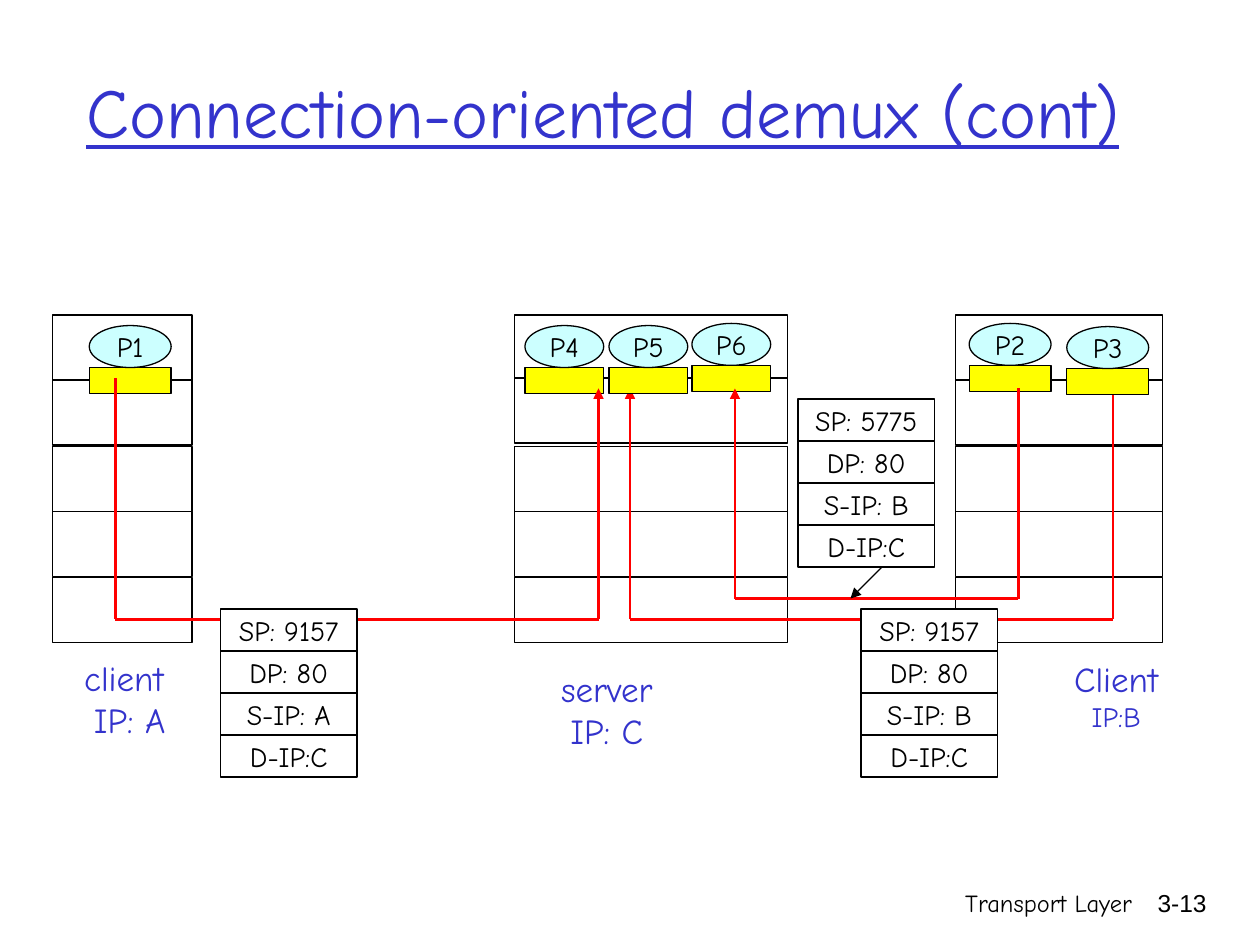
from dataclasses import dataclass

from lxml import etree
from pptx import Presentation
from pptx import util as u
from pptx.dml.color import RGBColor
from pptx.enum import shapes, text
from pptx.oxml.ns import qn

PX = 7620  # EMU per px: 120 px to the inch


@dataclass(frozen=True)
class Theme:
    font: str = "Comic Neue"
    number_font: str = "Arial"
    ink: str = "000000"
    paper: str = "FFFFFF"
    heading: str = "3333CC"
    process: str = "CCFFFF"
    socket: str = "FFFF00"
    connection: str = "FF0000"
    title_size: int = 40
    caption_size: int = 20
    label_size: int = 16
    footer_size: int = 14
    outline: float = 0.75
    connection_width: float = 1.5


THEME = Theme()
CENTER, LEFT, RIGHT = text.PP_ALIGN.CENTER, text.PP_ALIGN.LEFT, text.PP_ALIGN.RIGHT


def px(*lengths):
    return [u.Emu(length * PX) for length in lengths]


def write(frame, lines, sizes, color, align=CENTER, font=THEME.font, wrap=False):
    """Fill a text frame with one paragraph per line."""
    frame.text = "\n".join(lines)
    frame.word_wrap = wrap
    for paragraph, size in zip(frame.paragraphs, sizes):
        paragraph.alignment = align
        for run in paragraph.runs:
            run.font.name = font
            run.font.size = u.Pt(size)
            run.font.color.rgb = RGBColor.from_string(color)


def add_block(slide, preset, box, fill, label=None):
    block = slide.shapes.add_shape(preset, *px(*box))
    block.shadow.inherit = False
    block.fill.solid()
    block.fill.fore_color.rgb = RGBColor.from_string(fill)
    block.line.color.rgb = RGBColor.from_string(THEME.ink)
    block.line.width = u.Pt(THEME.outline)
    if label:
        write(block.text_frame, [label], [THEME.label_size], THEME.ink)
        block.text_frame.vertical_anchor = text.MSO_ANCHOR.MIDDLE


def add_line(slide, start, end, color, width, arrow=False):
    line = slide.shapes.add_connector(
        shapes.MSO_CONNECTOR.STRAIGHT, *px(*start, *end))
    line.line.color.rgb = RGBColor.from_string(color)
    line.line.width = u.Pt(width)
    properties = line._element.spPr
    if arrow:
        etree.SubElement(properties.find(qn("a:ln")), qn("a:tailEnd"), type="triangle")
    etree.SubElement(properties, qn("a:effectLst"))


def add_text(slide, box, lines, sizes, color, **style):
    write(slide.shapes.add_textbox(*px(*box)).text_frame, lines, sizes, color, **style)


def add_title(slide, box, wording):
    title = slide.shapes.title
    title.left, title.top, title.width, title.height = px(*box)
    write(title.text_frame, [wording], [THEME.title_size], THEME.heading, LEFT, wrap=True)
    title.text_frame.auto_size = text.MSO_AUTO_SIZE.NONE
    title.text_frame.vertical_anchor = text.MSO_ANCHOR.MIDDLE
    title.text_frame.paragraphs[0].runs[0].font.underline = True


def add_host(slide, box, second_layer_lift=0):
    """Protocol stack of five equal layers."""
    left, top, width, height = box
    for layer in range(5):
        lift = second_layer_lift if layer == 1 else 0
        layer_top = top + layer * height // 5 - lift
        add_block(slide, shapes.MSO_SHAPE.RECTANGLE,
                  (left, layer_top, width, height // 5), THEME.paper)


def add_process(slide, box, name):
    """Process ellipse standing on its socket."""
    left, top, width, height = box
    socket_height = 25
    process_height = height - socket_height
    add_block(slide, shapes.MSO_SHAPE.RECTANGLE,
              (left, top + process_height, width, socket_height), THEME.socket)
    add_block(slide, shapes.MSO_SHAPE.OVAL,
              (left, top, width, process_height), THEME.process, name)


def add_connection(slide, client_socket, server_socket, depth):
    """Path down from the client socket, across, and up to the server socket."""
    client_corner = (client_socket[0], depth)
    server_corner = (server_socket[0], depth)
    path = [client_socket, client_corner, server_corner, server_socket]
    for start, end in zip(path, path[1:]):
        add_line(slide, start, end, THEME.connection, THEME.connection_width,
                 arrow=end == server_socket)


def add_segment_header(slide, box, fields):
    left, top, width, height = box
    row = height // len(fields)
    for index, field in enumerate(fields):
        add_block(slide, shapes.MSO_SHAPE.RECTANGLE,
                  (left, top + index * row, width, row), THEME.paper, field)


def add_footer(slide, box, chapter, number):
    left, top, width, height = box
    number_width = 89
    add_text(slide, (left, top, 380, height), [chapter], [THEME.footer_size],
             THEME.ink, align=RIGHT, wrap=True)
    add_text(slide, (left + width - number_width, top, number_width, height), [number],
             [THEME.footer_size], THEME.ink, align=RIGHT, font=THEME.number_font, wrap=True)


def build_demux_slide(prs):
    slide = prs.slides.add_slide(prs.slide_layouts[5])
    add_title(slide, (70, 30, 1020, 150), "Connection-oriented demux (cont)")
    add_footer(slide, (710, 840, 451, 60), "Transport Layer", "3-13")

    # Hosts
    add_host(slide, (50, 300, 133, 313))
    add_host(slide, (910, 300, 197, 313))
    add_host(slide, (490, 300, 260, 313), second_layer_lift=2)

    # Host captions
    large, small = THEME.caption_size, THEME.label_size
    for box, lines, sizes in (
        ((61, 619, 114, 92), ["client", " IP: A"], [large, large]),
        ((515, 630, 126, 92), ["server", "IP: C"], [large, large]),
        ((1006, 620, 114, 84), ["Client", "IP:B"], [large, small]),
    ):
        add_text(slide, box, lines, sizes, THEME.heading)

    # Processes whose sockets lie under their connection
    for left, top, width, name in ((85, 310, 78, "P1"), (923, 308, 78, "P2"),
                                   (500, 310, 75, "P4"), (659, 308, 75, "P6")):
        add_process(slide, (left, top, width, 65), name)

    # Connections: P1 to P4, P3 to P5, P2 to P6
    add_connection(slide, (110, 360), (570, 370), 590)
    add_connection(slide, (1060, 360), (600, 370), 590)
    add_connection(slide, (970, 370), (700, 370), 570)

    # Processes whose sockets cover the end of their connection
    for left, top, width, name in ((580, 310, 75, "P5"), (1016, 311, 78, "P3")):
        add_process(slide, (left, top, width, 65), name)

    # Segment headers
    for left, top, source_port, source_host in (
            (210, 580, 9157, "A"), (820, 580, 9157, "B"), (760, 380, 5775, "B")):
        add_segment_header(slide, (left, top, 130, 160), [
            f"SP: {source_port}", "DP: 80", f"S-IP: {source_host}", "D-IP:C"])
    add_line(slide, (840, 540), (810, 570), THEME.ink, THEME.outline, arrow=True)


def main():
    prs = Presentation()
    prs.slide_width, prs.slide_height = px(1200, 900)
    build_demux_slide(prs)
    prs.save("out.pptx")


if __name__ == "__main__":
    main()
